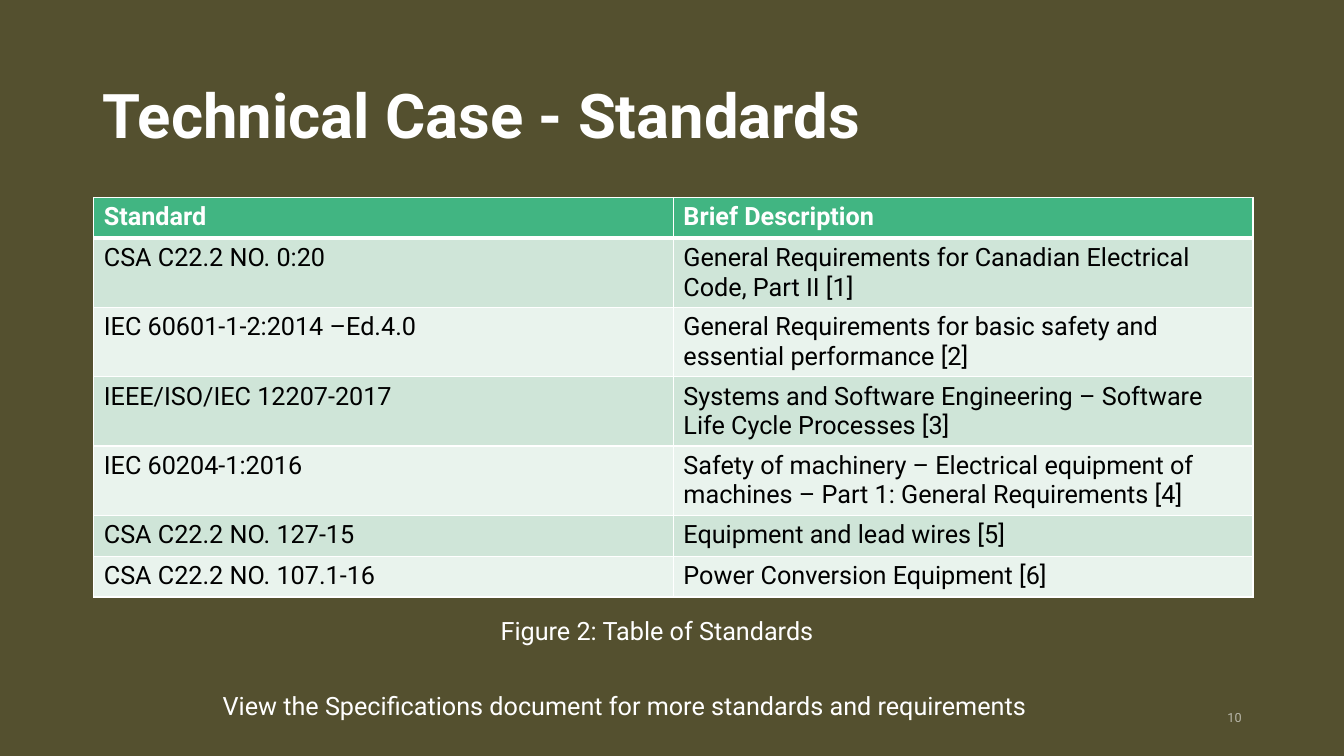
from lxml import etree
from pptx import Presentation
from pptx.dml.color import RGBColor
from pptx.enum.text import MSO_ANCHOR, PP_ALIGN
from pptx.oxml.ns import qn
from pptx.util import Pt

MIDDLE, TOP = MSO_ANCHOR.MIDDLE, MSO_ANCHOR.TOP
LEFT, RIGHT = PP_ALIGN.LEFT, PP_ALIGN.RIGHT

# Content
TITLE = "Technical Case - Standards"
ROWS = [
    ("Standard", "Brief Description"),
    ("CSA C22.2 NO. 0:20",
     "General Requirements for Canadian Electrical Code, Part II [1]"),
    ("IEC 60601-1-2:2014 –Ed.4.0",
     "General Requirements for basic safety and essential performance [2]"),
    ("IEEE/ISO/IEC 12207-2017",
     "Systems and Software Engineering – Software Life Cycle Processes [3]"),
    ("IEC 60204-1:2016",
     "Safety of machinery – Electrical equipment of machines – "
     "Part 1: General Requirements [4]"),
    ("CSA C22.2 NO. 127-15", "Equipment and lead wires [5]"),
    ("CSA C22.2 NO. 107.1-16", "Power Conversion Equipment [6]"),
]
CAPTION = "Figure 2: Table of Standards"
NOTE = "View the Specifications document for more standards and requirements"
PAGE = "10"

# Look
FONT = "Roboto"
OLIVE = RGBColor(0x54, 0x50, 0x2F)
GREEN = RGBColor(0x41, 0xB5, 0x82)
BANDS = [RGBColor(0xCF, 0xE5, 0xD8), RGBColor(0xE9, 0xF3, 0xED)]
WHITE = RGBColor(0xFF, 0xFF, 0xFF)
BLACK = RGBColor(0, 0, 0)
COL_W, ROW_H = 414, 29.2


def style(frame, size, color=WHITE, bold=False, align=LEFT):
    for para in frame.paragraphs:
        para.alignment = align
        for run in para.runs:
            font = run.font
            font.name, font.size, font.bold = FONT, Pt(size), bold
            font.color.rgb = color


def add_text(slide, text, box, size=18, align=LEFT, anchor=TOP):
    frame = slide.shapes.add_textbox(*map(Pt, box)).text_frame
    frame.word_wrap = True
    frame.vertical_anchor = anchor
    frame.text = text
    style(frame, size, align=align)
    return frame


def add_edge(cell, side, width):
    line = etree.SubElement(cell._tc.get_or_add_tcPr(), qn("a:ln" + side),
                            w=str(Pt(width)))
    fill = etree.SubElement(line, qn("a:solidFill"))
    etree.SubElement(fill, qn("a:srgbClr"), val=str(WHITE))


def add_table(slide):
    table = slide.shapes.add_table(
        len(ROWS), 2, Pt(67), Pt(141), Pt(2 * COL_W),
        Pt(len(ROWS) * ROW_H)).table
    for col in table.columns:
        col.width = Pt(COL_W)
    for r, row in enumerate(ROWS):
        table.rows[r].height = Pt(ROW_H)
        head = r == 0
        for c, text in enumerate(row):
            cell = table.cell(r, c)
            cell.text = text
            style(cell.text_frame, 18, WHITE if head else BLACK, head)
            # Thick rule between the header and the first row
            for side in "LRTB":
                thick = (r, side) in ((0, "B"), (1, "T"))
                add_edge(cell, side, 3 if thick else 1)
            cell.fill.solid()
            cell.fill.fore_color.rgb = GREEN if head else BANDS[(r - 1) % 2]


def main():
    deck = Presentation()
    deck.slide_width, deck.slide_height = Pt(960), Pt(540)
    slide = deck.slides.add_slide(deck.slide_layouts[5])
    back = slide.background.fill
    back.solid()
    back.fore_color.rgb = OLIVE

    # Title
    title = slide.shapes.title
    title.left, title.top = Pt(66), Pt(28.8)
    title.width, title.height = Pt(828), Pt(104.4)
    title.text_frame.text = TITLE
    title.text_frame.vertical_anchor = MIDDLE
    style(title.text_frame, 44, bold=True)

    # Table, caption and note
    add_table(slide)
    add_text(slide, CAPTION, (350.5, 435.6, 342, 29))
    add_text(slide, NOTE, (152, 489.6, 718.5, 29))

    # Page number, in 60 % white
    page = add_text(slide, PAGE, (678, 498.3, 216, 28.8), 9, RIGHT, MIDDLE)
    shade = page._txBody.find(".//" + qn("a:srgbClr"))
    etree.SubElement(shade, qn("a:alpha"), val="60000")

    deck.save("out.pptx")


if __name__ == "__main__":
    main()
